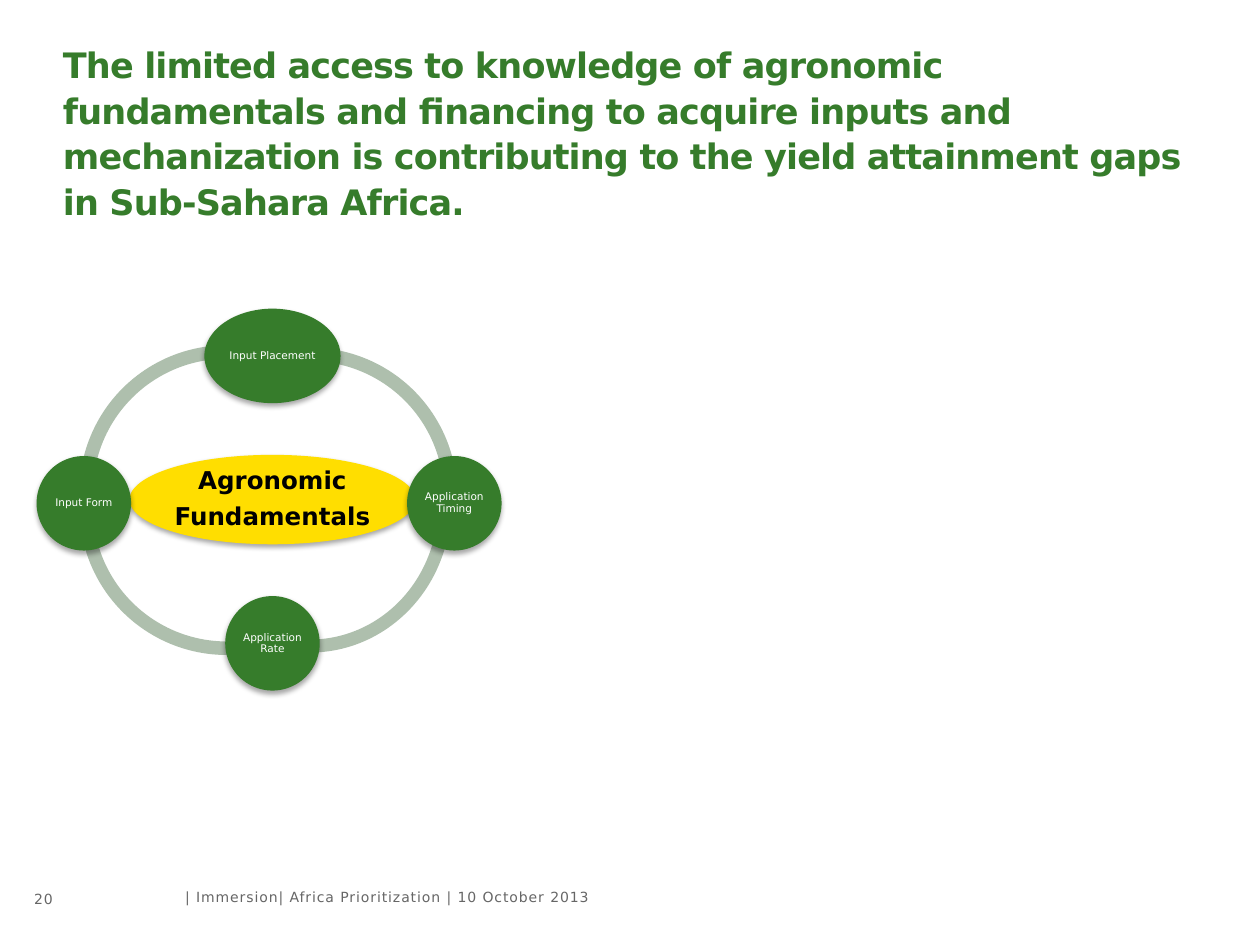
import lxml.etree
import pptx
import pptx.dml.color
import pptx.enum.shapes
import pptx.enum.text
import pptx.oxml.ns
import pptx.util

Pt = pptx.util.Pt
MSO_SHAPE = pptx.enum.shapes.MSO_SHAPE
ALIGN = pptx.enum.text.PP_ALIGN
ANCHOR = pptx.enum.text.MSO_ANCHOR
qn = pptx.oxml.ns.qn

COLORS = {
    "green": "367C2B",
    "yellow": "FFDE00",
    "ring": "AEBFAD",
    "grey": "666666",
    "white": "FFFFFF",
    "black": "000000",
}


class SlideBuilder:
    def __init__(self, slide, font="DejaVu Sans"):
        self.slide = slide
        self.font = font

    def color(self, name):
        return pptx.dml.color.RGBColor.from_string(COLORS[name])

    def fill_text(self, sp, lines, size, color, bold=False, align=ALIGN.LEFT,
                  anchor=ANCHOR.MIDDLE, spacing=None, gap=0, tracking=0, inset=0):
        """Fill a shape with one paragraph per line; gap and tracking are in points."""
        tf = sp.text_frame
        tf.word_wrap = True
        tf.vertical_anchor = anchor
        tf.margin_left = tf.margin_right = Pt(inset)
        tf.margin_top = tf.margin_bottom = Pt(inset)
        for i, line in enumerate(lines):
            p = tf.add_paragraph() if i else tf.paragraphs[0]
            p.alignment = align
            if spacing:
                p.line_spacing = spacing
            if i:
                p.space_before = Pt(gap)
            r = p.add_run()
            r.text = line
            r.font.name = self.font
            r.font.size = Pt(size)
            r.font.bold = bold
            r.font.color.rgb = self.color(color)
            if tracking:
                r.font._element.set("spc", str(round(tracking * 100)))

    def text(self, x, y, w, h, line, size, color, **style):
        sp = self.slide.shapes.add_textbox(Pt(x), Pt(y), Pt(w), Pt(h))
        self.fill_text(sp, [line], size, color, **style)

    def shape(self, kind, cx, cy, w, h, fill):
        """Add a borderless shape centred on (cx, cy)."""
        sp = self.slide.shapes.add_shape(
            kind, Pt(cx - w / 2), Pt(cy - h / 2), Pt(w), Pt(h))
        sp.shadow.inherit = False
        sp.fill.solid()
        sp.fill.fore_color.rgb = self.color(fill)
        sp.line.fill.background()
        return sp

    def arc(self, cx, cy, w, h, start, end):
        """Add a ring segment running clockwise between two angles in degrees."""
        sp = self.shape(MSO_SHAPE.BLOCK_ARC, cx, cy, w, h, "ring")
        sp.adjustments[0] = start % 360 * 0.6
        sp.adjustments[1] = end % 360 * 0.6
        sp.adjustments[2] = 0.046

    def ellipse(self, cx, cy, w, h, fill, lines, size, color, **style):
        sp = self.shape(MSO_SHAPE.OVAL, cx, cy, w, h, fill)
        self.add_shadow(sp)
        self.fill_text(sp, lines, size, color, align=ALIGN.CENTER, spacing=0.9, **style)

    def add_shadow(self, sp):
        effects = sp._element.spPr.find(qn("a:effectLst"))
        shadow = lxml.etree.SubElement(
            effects, qn("a:outerShdw"), blurRad=str(Pt(3.1)), dist=str(Pt(1.8)),
            dir="5400000", rotWithShape="0")
        color = lxml.etree.SubElement(shadow, qn("a:srgbClr"), val=COLORS["black"])
        lxml.etree.SubElement(color, qn("a:alpha"), val="35000")


def main():
    prs = pptx.Presentation()
    prs.slide_width, prs.slide_height = Pt(720), Pt(540)
    s = SlideBuilder(prs.slides.add_slide(prs.slide_layouts[6]))

    footer = {"size": 8, "color": "grey", "tracking": 0.5}
    s.text(3.6, 502.6, 26.6, 21.6, "20", align=ALIGN.RIGHT, **footer)
    s.text(105.8, 501.8, 396, 21.6,
           "| Immersion| Africa Prioritization | 10 October 2013", **footer)
    s.text(36, 23, 648, 51.1,
           "The limited access to knowledge of agronomic fundamentals and financing "
           "to acquire inputs and mechanization is contributing to the yield "
           "attainment gaps in Sub-Sahara Africa.",
           20, "green", bold=True, anchor=ANCHOR.TOP, spacing=Pt(26), tracking=-0.5)

    # Each quarter runs a little past its ends so the nodes cover the joins.
    overlap = 5
    quarters = [
        (177.1, 288.7, 161.3),
        (129.6, 290.1, 168.5),
        (129.6, 281.5, 168.5),
        (177.1, 282.9, 168.5),
    ]
    for i, (cx, cy, width) in enumerate(quarters):
        s.arc(cx, cy, width, 168.5, 90 * i - overlap, 90 * (i + 1) + overlap)

    s.ellipse(155.7, 285.5, 163.4, 51.1, "yellow", ["Agronomic", "Fundamentals"],
              14, "black", bold=True, gap=5, inset=1.4)

    node = 54
    nodes = [
        ("Input Placement", 155.7, 203.4, 77.8),
        ("Application Timing", 259.6, 287.6, node),
        ("Application Rate", 155.7, 367.6, node),
        ("Input Form", 47.9, 287.6, node),
    ]
    for label, cx, cy, width in nodes:
        s.ellipse(cx, cy, width, node, "green", [label], 6, "white", inset=0.6)

    prs.save("out.pptx")


if __name__ == "__main__":
    main()
